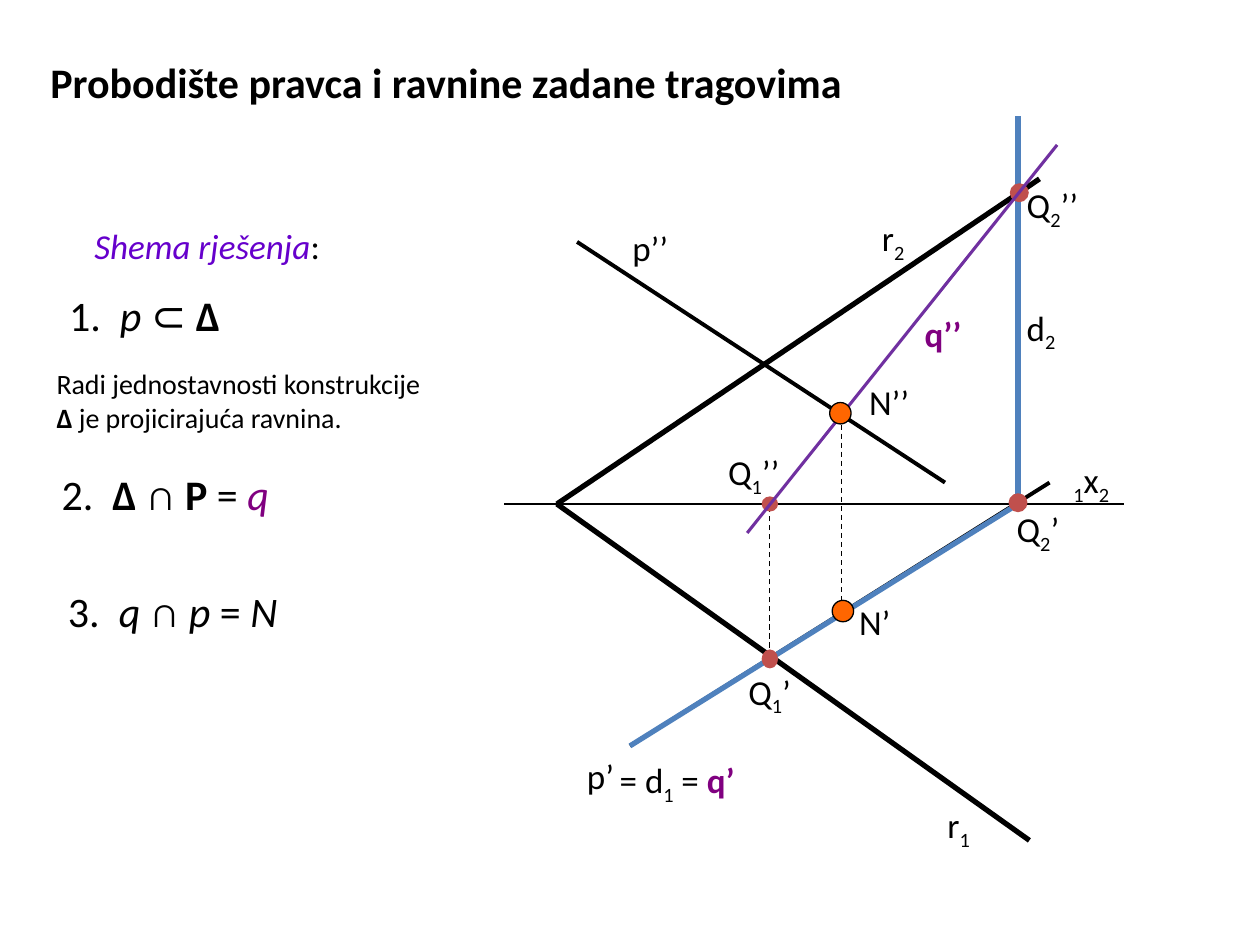
import dataclasses
import typing

import pptx
import pptx.dml.color
import pptx.enum.dml
import pptx.enum.shapes
import pptx.enum.text
import pptx.oxml.ns
import pptx.util
from lxml import etree

Inches = pptx.util.Inches
RGBColor = pptx.dml.color.RGBColor

BLACK = RGBColor(0x00, 0x00, 0x00)
BLUE = RGBColor(0x4F, 0x81, 0xBD)
RED = RGBColor(0xC0, 0x50, 0x4D)
ORANGE = RGBColor(0xFF, 0x66, 0x00)
PURPLE = RGBColor(0x70, 0x30, 0xA0)
PLUM = RGBColor(0x80, 0x00, 0x80)
VIOLET = RGBColor(0x66, 0x00, 0xCC)


@dataclasses.dataclass
class Run:
    text: str
    bold: bool = False
    italic: bool = False
    low: bool = False
    color: RGBColor = BLACK


@dataclasses.dataclass
class Label:
    left: float
    top: float
    width: float
    runs: list[Run]
    size: int = 20
    height: float = 0.44


@dataclasses.dataclass
class Line:
    start: tuple[float, float]
    end: tuple[float, float]
    width: float
    color: RGBColor = BLACK
    dash: bool = False


@dataclasses.dataclass
class Dot:
    x: float
    y: float
    width: float = 0.14
    height: float = 0.14
    fill: RGBColor = RED
    line: RGBColor = RED


def apply(target: typing.Any, values: dict[str, typing.Any]) -> None:
    for name, value in values.items():
        setattr(target, name, value)


def write(shape: typing.Any, runs: list[Run], size: int) -> None:
    para = shape.text_frame.paragraphs[0]
    para.alignment = pptx.enum.text.PP_ALIGN.LEFT
    for item in runs:
        run = para.add_run()
        run.text = item.text
        apply(run.font, {"name": "Calibri", "size": pptx.util.Pt(size),
                         "bold": item.bold, "italic": item.italic})
        run.font.color.rgb = item.color
        if item.low:
            run.font._element.set("baseline", "-25000")


def draw_label(slide: typing.Any, label: Label) -> None:
    box = slide.shapes.add_textbox(Inches(label.left), Inches(label.top),
                                   Inches(label.width), Inches(label.height))
    box.text_frame.word_wrap = True
    write(box, label.runs, label.size)


def draw_line(slide: typing.Any, line: Line) -> None:
    ends = [Inches(v) for v in line.start + line.end]
    item = slide.shapes.add_connector(pptx.enum.shapes.MSO_CONNECTOR.STRAIGHT, *ends)
    item.line.width = pptx.util.Pt(line.width)
    item.line.color.rgb = line.color
    if line.dash:
        item.line.dash_style = pptx.enum.dml.MSO_LINE.DASH
    etree.SubElement(item._element.spPr, pptx.oxml.ns.qn("a:effectLst"))


def draw_dot(slide: typing.Any, dot: Dot) -> None:
    item = slide.shapes.add_shape(
        pptx.enum.shapes.MSO_SHAPE.OVAL,
        Inches(dot.x - dot.width / 2), Inches(dot.y - dot.height / 2),
        Inches(dot.width), Inches(dot.height))
    item.shadow.inherit = False
    item.fill.solid()
    item.fill.fore_color.rgb = dot.fill
    item.line.color.rgb = dot.line
    item.line.width = pptx.util.Pt(0.75)


def point(name: str, index: str, mark: str = "") -> list[Run]:
    runs = [Run(name), Run(index, low=True)]
    return runs + [Run(mark)] if mark else runs


LINES = [
    Line((4, 4), (8.92, 4), 1),
    Line((8.25, 1.42), (4.42, 4), 3),
    Line((4.42, 4), (8.17, 6.67), 3),
    Line((4.58, 1.92), (7.5, 3.83), 2.25),
    Line((8.33, 3.83), (5, 5.92), 2.25),
    Line((8.08, 4), (5, 5.92), 3, BLUE),
    Line((8.08, 4), (8.08, 0.92), 3, BLUE),
    Line((6.11, 5.14), (6.11, 4.01), 0.75, dash=True),
    Line((6.68, 3.37), (6.68, 4.85), 0.75, dash=True),
]
DOTS = [
    Dot(6.11, 5.23, 0.12),
    Dot(6.11, 4, 0.12, 0.11),
    Dot(8.08, 3.99),
    Dot(8.09, 1.53),
]
TRACE = Line((8.39, 1.15), (5.93, 4.23), 1.75, PURPLE)
HITS = [
    Dot(6.67, 3.28, 0.17, 0.17, ORANGE, BLACK),
    Dot(6.69, 4.85, 0.17, 0.17, ORANGE, BLACK),
]
LABELS = [
    Label(0.65, 1.73, 2.34, [Run("Shema rješenja", italic=True, color=VIOLET), Run(":")]),
    Label(0.45, 2.25, 2.11, [Run("1.  "), Run("p ", italic=True), Run("⊂ "),
                             Run("Δ", bold=True)], 24, 0.5),
    Label(0.35, 2.86, 3.15, [Run("Radi jednostavnosti konstrukcije "), Run("Δ", bold=True),
                             Run(" je projicirajuća ravnina.")], 16, 0.64),
    Label(0.39, 3.67, 3.67, [Run("2.  "), Run("Δ", bold=True), Run(" ∩ "),
                             Run("Ρ", bold=True), Run(" = "),
                             Run("q", italic=True, color=PLUM)], 24, 0.5),
    Label(0.44, 4.6, 2.58, [Run("3.  "), Run("q ", italic=True), Run("∩ "),
                            Run("p", italic=True), Run(" = "),
                            Run("N", italic=True)], 24, 0.5),
    Label(8.42, 3.59, 0.67, [Run("1", low=True)] + point("x", "2")),
    Label(7.42, 6.33, 0.75, point("r", "1")),
    Label(6.9, 1.67, 0.92, point("r", "2")),
    Label(4.92, 1.75, 0.83, [Run("p’’")]),
    Label(4.56, 5.94, 0.83, [Run("p’")]),
    Label(4.82, 5.97, 0.83, point("= d", "1")),
    Label(5.31, 5.97, 0.92, [Run("= "), Run("q’", bold=True, color=PLUM)]),
    Label(8.05, 2.38, 0.53, point("d", "2")),
    Label(5.84, 5.27, 0.61, point("Q", "1", "’")),
    Label(5.68, 3.53, 0.73, point("Q", "1", "’’")),
    Label(7.97, 3.98, 0.76, point("Q", "2", "’")),
    Label(8.05, 1.41, 0.71, point("Q", "2", "’’")),
    Label(7.24, 2.43, 0.62, [Run("q’’", bold=True, color=PLUM)]),
    Label(6.8, 2.97, 0.8, [Run("N’’")]),
    Label(6.72, 4.72, 0.63, [Run("N’")]),
]


def main() -> None:
    deck = pptx.Presentation()
    apply(deck, {"slide_width": Inches(10), "slide_height": Inches(7.5)})
    slide = deck.slides.add_slide(deck.slide_layouts[5])
    title = slide.shapes.title
    apply(title, {"left": Inches(0.3), "top": Inches(0.4),
                  "width": Inches(6.81), "height": Inches(0.5)})
    apply(title.text_frame, {"word_wrap": True,
                             "auto_size": pptx.enum.text.MSO_AUTO_SIZE.NONE,
                             "vertical_anchor": pptx.enum.text.MSO_ANCHOR.BOTTOM})
    write(title, [Run("Probodište pravca i ravnine zadane tragovima", bold=True)], 24)
    for line in LINES:
        draw_line(slide, line)
    for dot in DOTS:
        draw_dot(slide, dot)
    draw_line(slide, TRACE)
    for dot in HITS:
        draw_dot(slide, dot)
    for label in LABELS:
        draw_label(slide, label)
    deck.save("out.pptx")


if __name__ == "__main__":
    main()
